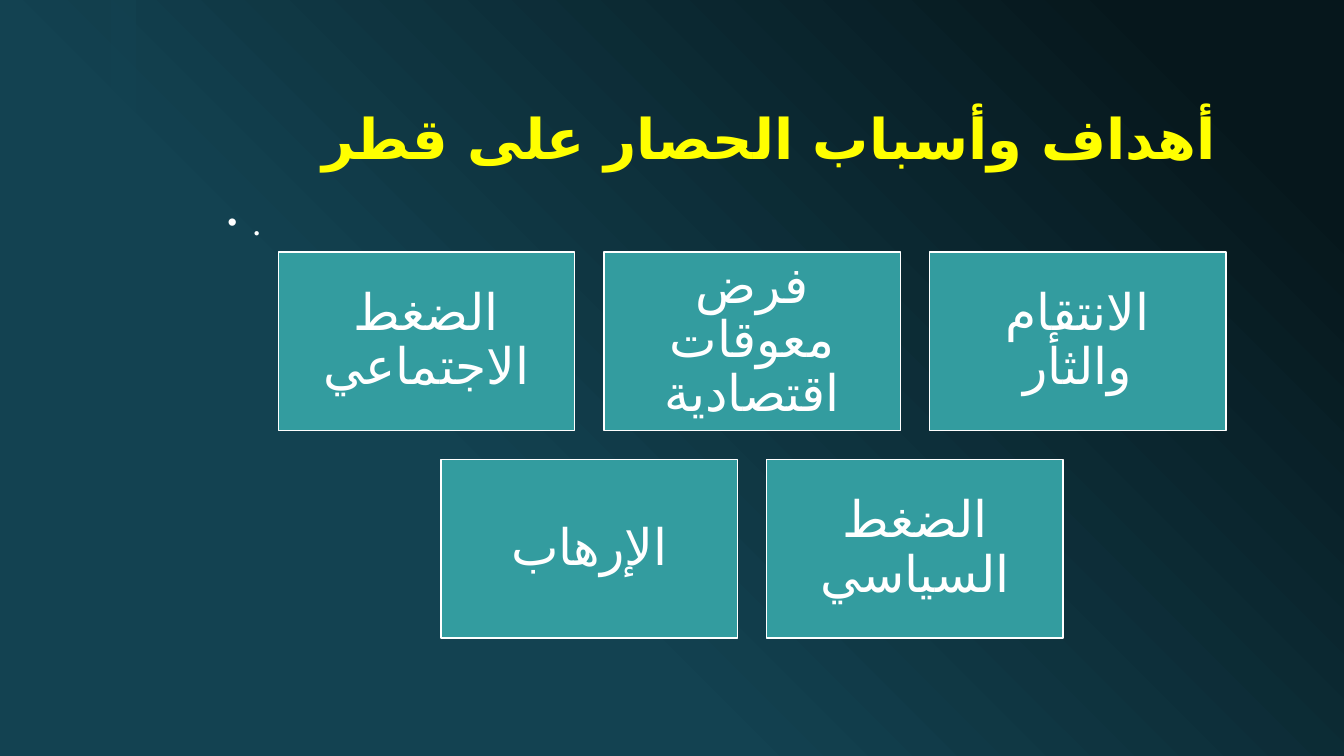
"""Build a slide on the aims and causes of the blockade, as a centred grid of boxes."""
from lxml import etree
from pptx import Presentation
from pptx.dml.color import RGBColor
from pptx.enum.shapes import MSO_SHAPE
from pptx.enum.text import MSO_ANCHOR, PP_ALIGN
from pptx.oxml.ns import qn
from pptx.util import Inches, Pt

TITLE = "أهداف وأسباب الحصار على قطر"
BODY = "."
CAUSE_ROWS = [
    ["الضغط الاجتماعي", "فرض معوقات اقتصادية", "الانتقام والثأر"],
    ["الإرهاب", "الضغط السياسي"],
]

FONT = "League Spartan"
ARABIC_FONT = "DejaVu Sans"
NIGHT = RGBColor(0x06, 0x17, 0x1C)
PETROL = RGBColor(0x13, 0x42, 0x51)
TEAL = RGBColor(0x33, 0x9C, 0x9F)
YELLOW = RGBColor(0xFF, 0xFF, 0x00)
WHITE = RGBColor(0xFF, 0xFF, 0xFF)
RECTANGLE = MSO_SHAPE.RECTANGLE
TOP, MIDDLE, BOTTOM = MSO_ANCHOR.TOP, MSO_ANCHOR.MIDDLE, MSO_ANCHOR.BOTTOM
LEFT, CENTER, RIGHT = PP_ALIGN.LEFT, PP_ALIGN.CENTER, PP_ALIGN.RIGHT

SLIDE_WIDTH, SLIDE_HEIGHT = 13.33, 7.5
CONTENT_LEFT = 2.16
BOX_WIDTH, BOX_HEIGHT, GAP = 2.94, 1.77, 0.29
GRID_CENTER, GRID_TOP = 7.46, 2.5


def write(shape, text, size, color, align, anchor, bold=False, rtl=True):
    frame = shape.text_frame
    frame.word_wrap = True
    frame.vertical_anchor = anchor
    paragraph = frame.paragraphs[0]
    paragraph.text = text
    paragraph.alignment = align
    paragraph.line_spacing = 0.9
    if rtl:
        paragraph._p.get_or_add_pPr().set("rtl", "1")
    font = paragraph.font
    font.name, font.size, font.bold = FONT, Pt(size), bold
    font.color.rgb = color
    etree.SubElement(font._rPr, qn("a:cs"), typeface=ARABIC_FONT)


def add_rectangle(slide, left, top, width, height, color):
    shape = slide.shapes.add_shape(
        RECTANGLE, Inches(left), Inches(top), Inches(width), Inches(height))
    shape.shadow.inherit = False
    shape.fill.solid()
    shape.fill.fore_color.rgb = color
    return shape


def add_text_box(slide, left, top, width, height):
    return slide.shapes.add_textbox(
        Inches(left), Inches(top), Inches(width), Inches(height))


def paint_background(slide):
    fill = slide.background.fill
    fill.gradient()
    fill.gradient_angle = 225
    for stop, position, color in zip(fill.gradient_stops, (0.1, 0.65), (NIGHT, PETROL)):
        stop.position = position
        stop.color.rgb = color
    band = add_rectangle(slide, 1.1, 0, 0.25, SLIDE_HEIGHT, PETROL)
    band.line.fill.background()
    band_color = band._element.spPr.find(qn("a:solidFill"))[0]
    etree.SubElement(band_color, qn("a:alpha"), val="60000")


def add_body(slide):
    box = add_text_box(slide, CONTENT_LEFT, 2, 4.83, 4.83)
    properties = box.text_frame.paragraphs[0]._p.get_or_add_pPr()
    properties.set("marL", str(Inches(0.24)))
    properties.set("indent", str(Inches(-0.24)))
    etree.SubElement(properties, qn("a:buSzPct"), val="80000")
    etree.SubElement(properties, qn("a:buFont"), typeface="Arial")
    etree.SubElement(properties, qn("a:buChar"), char="•")
    write(box, BODY, 24, WHITE, LEFT, TOP, rtl=False)


def add_causes(slide):
    for row, causes in enumerate(CAUSE_ROWS):
        row_width = len(causes) * (BOX_WIDTH + GAP) - GAP
        top = GRID_TOP + row * (BOX_HEIGHT + GAP)
        for column, cause in enumerate(causes):
            left = GRID_CENTER - row_width / 2 + column * (BOX_WIDTH + GAP)
            box = add_rectangle(slide, left, top, BOX_WIDTH, BOX_HEIGHT, TEAL)
            box.line.color.rgb = WHITE
            box.line.width = Pt(1)
            frame = box.text_frame
            frame.margin_left = frame.margin_right = Inches(0.15)
            frame.margin_top = frame.margin_bottom = Inches(0.15)
            write(box, cause, 36, WHITE, CENTER, MIDDLE)


def main():
    presentation = Presentation()
    presentation.slide_width = Inches(SLIDE_WIDTH)
    presentation.slide_height = Inches(SLIDE_HEIGHT)
    slide = presentation.slides.add_slide(presentation.slide_layouts[6])
    paint_background(slide)
    title = add_text_box(slide, CONTENT_LEFT, 0.42, 10, 1.33)
    write(title, TITLE, 40, YELLOW, RIGHT, BOTTOM, bold=True)
    add_body(slide)
    add_causes(slide)
    presentation.save("out.pptx")


if __name__ == "__main__":
    main()
